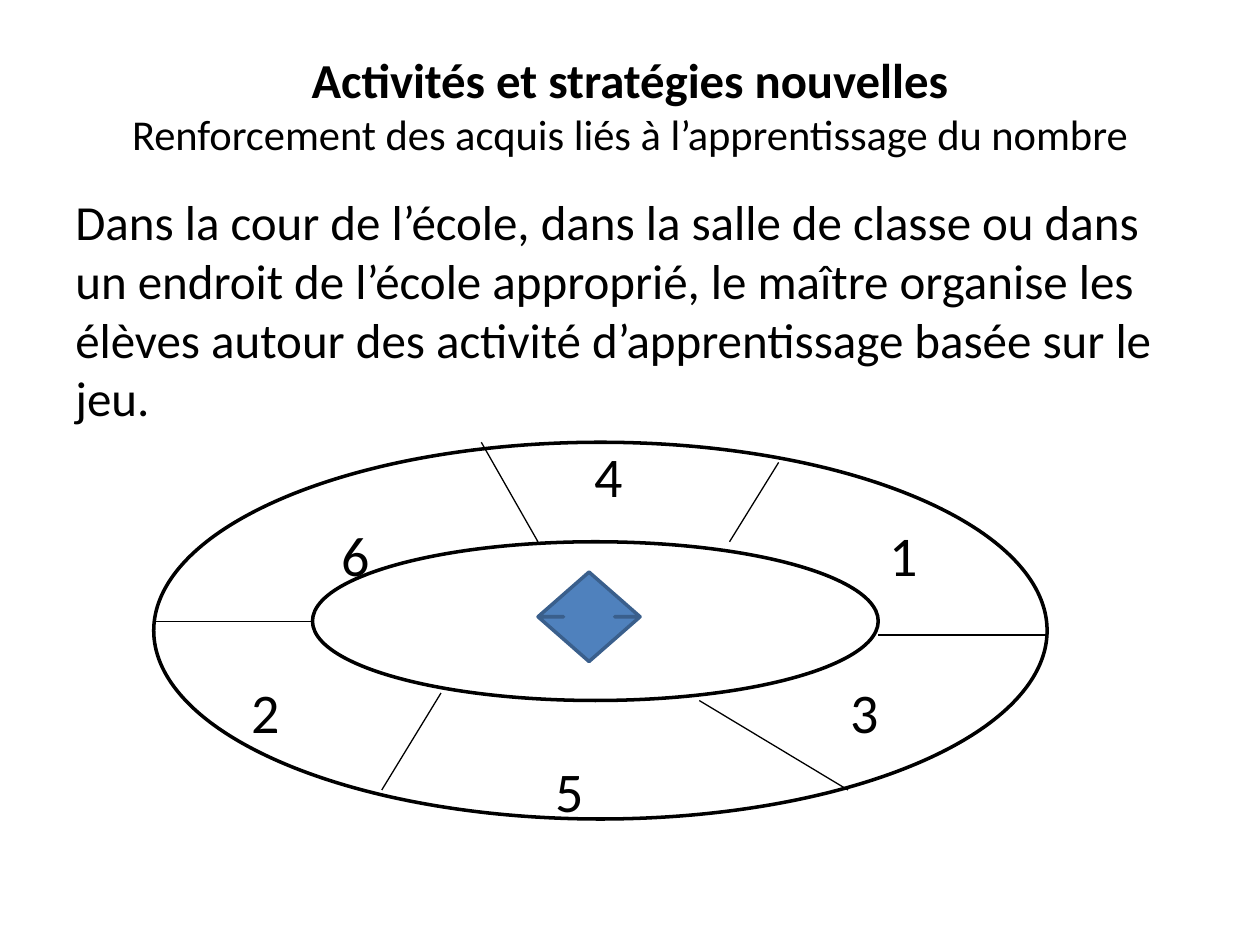
from pptx import Presentation
from pptx.dml.color import RGBColor
from pptx.enum.shapes import MSO_CONNECTOR, MSO_SHAPE
from pptx.enum.text import MSO_ANCHOR, PP_ALIGN
from pptx.oxml.ns import qn
from pptx.util import Inches, Pt
from lxml.etree import SubElement


def paint(code):
    return RGBColor.from_string(code)


def write(para, text, size=28, bold=False, align=PP_ALIGN.LEFT, font="Calibri", color="000000"):
    para.alignment = align
    run = para.add_run()
    run.text = text
    run.font.name = font
    run.font.size = Pt(size)
    run.font.bold = bold
    run.font.color.rgb = paint(color)


class Board:
    ink = "000000"
    paper = "FFFFFF"

    def __init__(self, slide):
        self.shapes = slide.shapes

    def text(self, box, *lines, anchor=MSO_ANCHOR.TOP):
        frame = self.shapes.add_textbox(*map(Inches, box)).text_frame
        frame.word_wrap = True
        frame.vertical_anchor = anchor
        for count, (words, style) in enumerate(lines):
            para = frame.add_paragraph() if count else frame.paragraphs[0]
            write(para, words, **style)

    def digit(self, value, x, y):
        style = {"size": 32, "align": PP_ALIGN.CENTER}
        self.text((x - 0.3, y - 0.3, 0.6, 0.6), (value, style), anchor=MSO_ANCHOR.MIDDLE)

    def shape(self, kind, box, fill=paper, line=ink):
        item = self.shapes.add_shape(kind, *map(Inches, box))
        item.shadow.inherit = False
        item.fill.solid()
        item.fill.fore_color.rgb = paint(fill)
        item.line.color.rgb = paint(line)
        item.line.width = Pt(2)

    def line(self, *ends):
        item = self.shapes.add_connector(MSO_CONNECTOR.STRAIGHT, *map(Inches, ends))
        item.line.color.rgb = paint(self.ink)
        item.line.width = Pt(0.75)
        SubElement(item._element.spPr, qn("a:effectLst"))


def main():
    deck = Presentation()
    deck.slide_width, deck.slide_height = Inches(10), Inches(7.5)
    board = Board(deck.slides.add_slide(deck.slide_layouts[6]))

    board.text(
        (0.5, 0.36, 9, 0.94),
        ("Activités et stratégies nouvelles",
         {"size": 27.9, "bold": True, "align": PP_ALIGN.CENTER}),
        ("Renforcement des acquis liés à l’apprentissage du nombre",
         {"size": 24.3, "align": PP_ALIGN.CENTER}),
        anchor=MSO_ANCHOR.MIDDLE,
    )
    board.shape(MSO_SHAPE.OVAL, (1.22, 3.51, 7.09, 2.99))
    board.text(
        (0.5, 1.47, 9, 2),
        ("Dans la cour de l’école, dans la salle de classe ou dans un endroit "
         "de l’école approprié, le maître organise les élèves autour des "
         "activité d’apprentissage basée sur le jeu.", {}),
    )

    top, step = 3.77, 0.625
    for value, x, row in (
        ("4", 4.83, 0), ("6", 2.82, 1), ("1", 7.17, 1),
        ("2", 2.11, 3), ("3", 6.86, 3), ("5", 4.52, 4),
    ):
        board.digit(value, x, top + row * step)

    board.shape(MSO_SHAPE.OVAL, (2.48, 4.3, 4.49, 1.26))
    for ends in (
        (2.48, 4.93, 1.22, 4.93), (4.27, 4.3, 3.82, 3.51),
        (8.31, 5.04, 6.97, 5.04), (6.73, 6.27, 5.55, 5.56),
        (3.03, 6.27, 3.5, 5.5), (5.79, 4.3, 6.18, 3.67),
    ):
        board.line(*ends)
    board.shape(MSO_SHAPE.UP_DOWN_ARROW, (4.27, 4.54, 0.81, 0.71), "4F81BD", "3A5F8C")

    deck.save("out.pptx")


if __name__ == "__main__":
    main()
